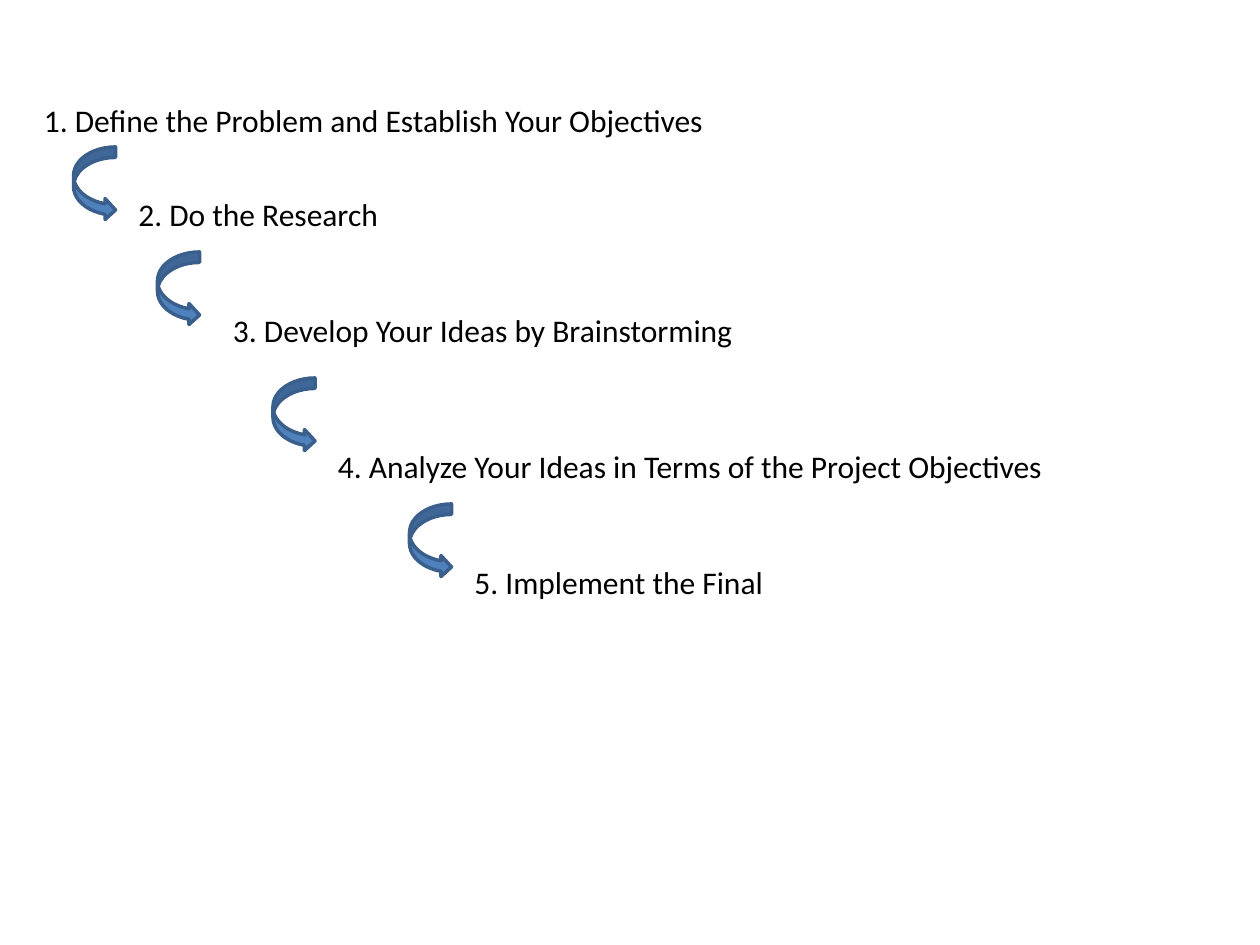
from pptx import Presentation
from pptx.dml.color import RGBColor
from pptx.enum.shapes import MSO_SHAPE as Shape
from pptx.enum.text import MSO_AUTO_SIZE as AutoSize
from pptx.util import Inches, Pt


def color(hex_value):
    return RGBColor.from_string(hex_value)


# Slide and a grid of twelve units to the inch
presentation = Presentation()
presentation.slide_width = Inches(10)
presentation.slide_height = Inches(7.5)
slide = presentation.slides.add_slide(presentation.slide_layouts[6])
UNIT = Inches(1) // 12

# Steps: text, column, row, width in inches, wraps
steps = [
    ("Define the Problem and Establish Your Objectives", 3, 9, 6, True),
    ("Do the Research", 12, 18, 2.13, False),
    ("Develop Your Ideas by Brainstorming", 21, 29, 4.21, False),
    ("Analyze Your Ideas in Terms of the Project Objectives", 31, 42, 6.67, True),
    ("Implement the Final", 44, 53, 2.52, False),
]
text_format = {"name": "Calibri", "size": Pt(18)}

for number, (text, column, row, width, wraps) in enumerate(steps, start=1):
    box = slide.shapes.add_textbox(column * UNIT, row * UNIT, Inches(width), Inches(0.4))
    frame = box.text_frame
    frame.word_wrap = wraps
    frame.auto_size = AutoSize.SHAPE_TO_FIT_TEXT
    run = frame.paragraphs[0].add_run()
    run.text = f"{number}. {text}"
    for attribute, value in text_format.items():
        setattr(run.font, attribute, value)
    run.font.color.rgb = color("000000")

# Curved arrows leading from each step to the next: column, row
for column, row in [(7, 14), (15, 24), (26, 36), (39, 48)]:
    arrow = slide.shapes.add_shape(
        Shape.CURVED_RIGHT_ARROW, column * UNIT, row * UNIT, 4 * UNIT, 7 * UNIT)
    arrow.shadow.inherit = False
    arrow.fill.solid()
    arrow.fill.fore_color.rgb = color("4F81BD")
    arrow.line.color.rgb = color("3A5F8C")
    arrow.line.width = Pt(2)

presentation.save("out.pptx")
